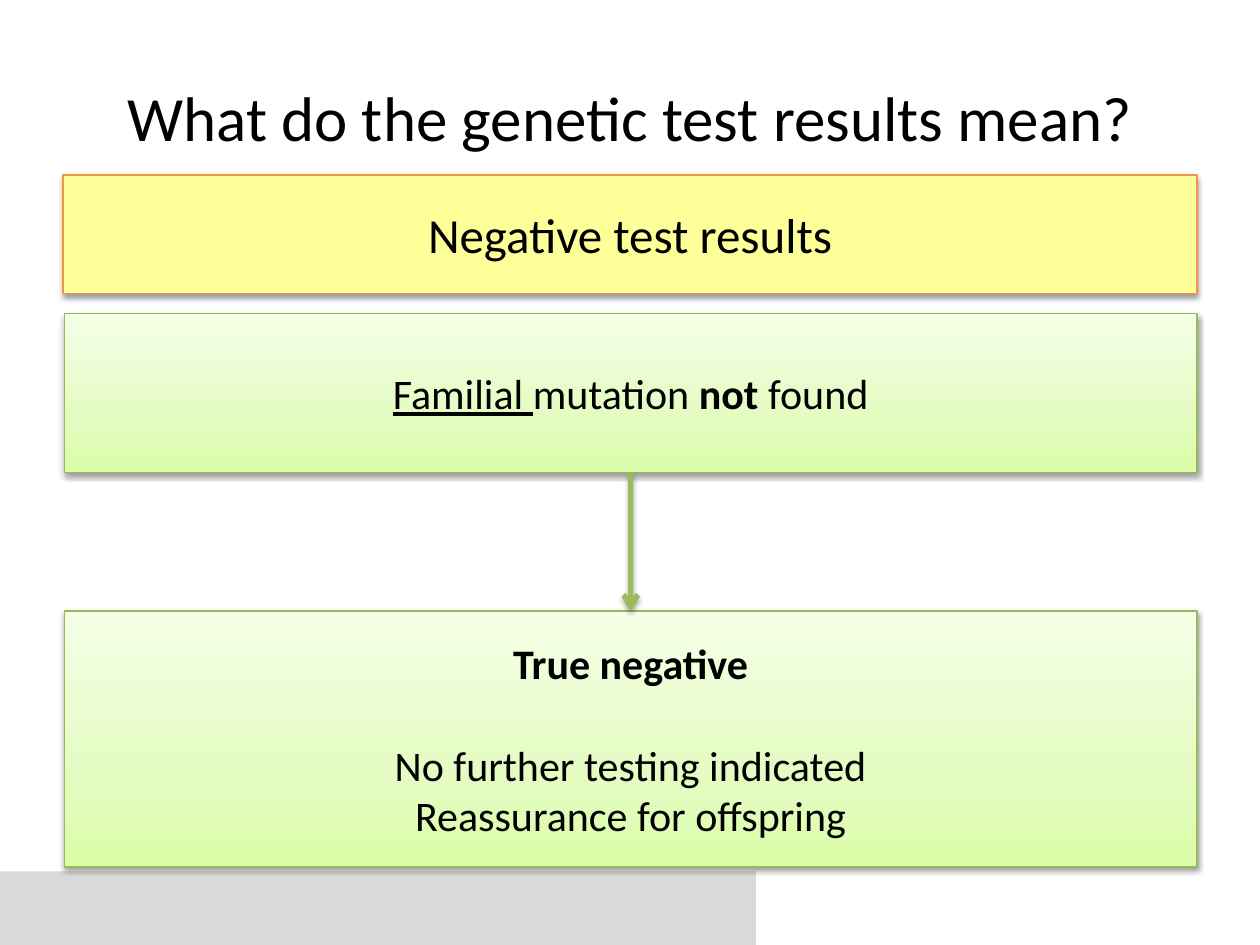
"""Builds a slide that explains negative genetic test results."""
from copy import deepcopy

from lxml import etree
from pptx import Presentation
from pptx.dml.color import RGBColor
from pptx.enum.shapes import MSO_CONNECTOR, MSO_SHAPE
from pptx.enum.text import MSO_ANCHOR, PP_ALIGN
from pptx.oxml.ns import qn
from pptx.util import Pt

RECT = MSO_SHAPE.RECTANGLE
LINE = MSO_CONNECTOR.STRAIGHT
MIDDLE = MSO_ANCHOR.MIDDLE
CENTER = PP_ALIGN.CENTER
BLACK = RGBColor(0x00, 0x00, 0x00)
GREY = RGBColor(0xD9, 0xD9, 0xD9)
YELLOW = RGBColor(0xFF, 0xFF, 0x99)
ORANGE = RGBColor(0xF6, 0x92, 0x40)
GREEN = RGBColor(0x98, 0xB9, 0x55)
ARROW = RGBColor(0x9B, 0xBB, 0x59)
FADE = [
    (0, RGBColor(0xDA, 0xFD, 0xA7)),
    (0.35, RGBColor(0xE4, 0xFC, 0xC2)),
    (1, RGBColor(0xF5, 0xFF, 0xE7)),
]
FONT = "Calibri"


def write(frame, lines, size):
    """Fill a frame with lines of (gap, runs), each run (text, style)."""
    frame.word_wrap = True
    frame.vertical_anchor = MIDDLE
    for i, (gap, runs) in enumerate(lines):
        para = frame.paragraphs[0] if i == 0 else frame.add_paragraph()
        para.alignment = CENTER
        if gap:
            para.space_before = Pt(gap)
        for text, style in runs:
            run = para.add_run()
            run.text = text
            font = run.font
            font.name, font.size = FONT, Pt(size)
            font.color.rgb = BLACK
            font.bold = style == "bold"
            font.underline = style == "under"


def shade(effects, dist, alpha):
    """Put a soft shadow that falls straight down in an effect list."""
    outer = etree.SubElement(
        effects, qn("a:outerShdw"), blurRad=str(Pt(3.1)), dist=str(Pt(dist)),
        dir="5400000", rotWithShape="0")
    color = etree.SubElement(outer, qn("a:srgbClr"), val=str(BLACK))
    etree.SubElement(color, qn("a:alpha"), val=str(alpha * 1000))


prs = Presentation()
prs.slide_width, prs.slide_height = Pt(720), Pt(540)
slide = prs.slides.add_slide(prs.slide_layouts[5])
shapes = slide.shapes

bar = shapes.add_shape(RECT, Pt(0), Pt(498), Pt(432), Pt(42))
bar.shadow.inherit = False
bar.fill.solid()
bar.fill.fore_color.rgb = GREY
bar.line.fill.background()

title = shapes.title
title.left, title.top, title.width, title.height = Pt(36), Pt(21.6), Pt(648), Pt(90)
write(title.text_frame, [(0, [("What do the genetic test results mean?", "")])], 36)

found = [("Familial ", "under"), ("mutation ", ""), ("not", "bold"), (" found", "")]
advice = [
    (0, [("True negative", "bold")]),
    (29.3, [("No further testing indicated", "")]),
    (0, [("Reassurance for offspring", "")]),
]
boxes = [
    (36.7, 179.3, 647.3, 90.7, None, GREEN, 24, [(0, found)]),
    (36, 100, 648, 67.7, YELLOW, ORANGE, 28, [(0, [("Negative test results", "")])]),
    (36.7, 349.2, 647.3, 146.2, None, GREEN, 24, advice),
]
for left, top, width, height, color, edge, size, lines in boxes:
    box = shapes.add_shape(RECT, Pt(left), Pt(top), Pt(width), Pt(height))
    if color:
        box.fill.solid()
        box.fill.fore_color.rgb = color
    else:
        box.fill.gradient()
        box.fill.gradient_angle = 90
        stops = box._element.spPr.find(".//" + qn("a:gsLst"))
        stops.insert(1, deepcopy(stops[0]))
        for stop, (spot, tint) in zip(box.fill.gradient_stops, FADE):
            stop.position = spot
            stop.color.rgb = tint
    box.line.color.rgb = edge
    box.line.width = Pt(0.75)
    box.shadow.inherit = False
    shade(box._element.spPr.find(qn("a:effectLst")), 1.6, 38)
    write(box.text_frame, lines, size)

arrow = shapes.add_connector(LINE, Pt(360.4), Pt(270), Pt(360.4), Pt(349.2))
arrow.line.color.rgb = ARROW
arrow.line.width = Pt(3)
props = arrow._element.spPr
etree.SubElement(props.find(qn("a:ln")), qn("a:tailEnd"), type="arrow")
shade(etree.SubElement(props, qn("a:effectLst")), 1.8, 35)

prs.save("out.pptx")
